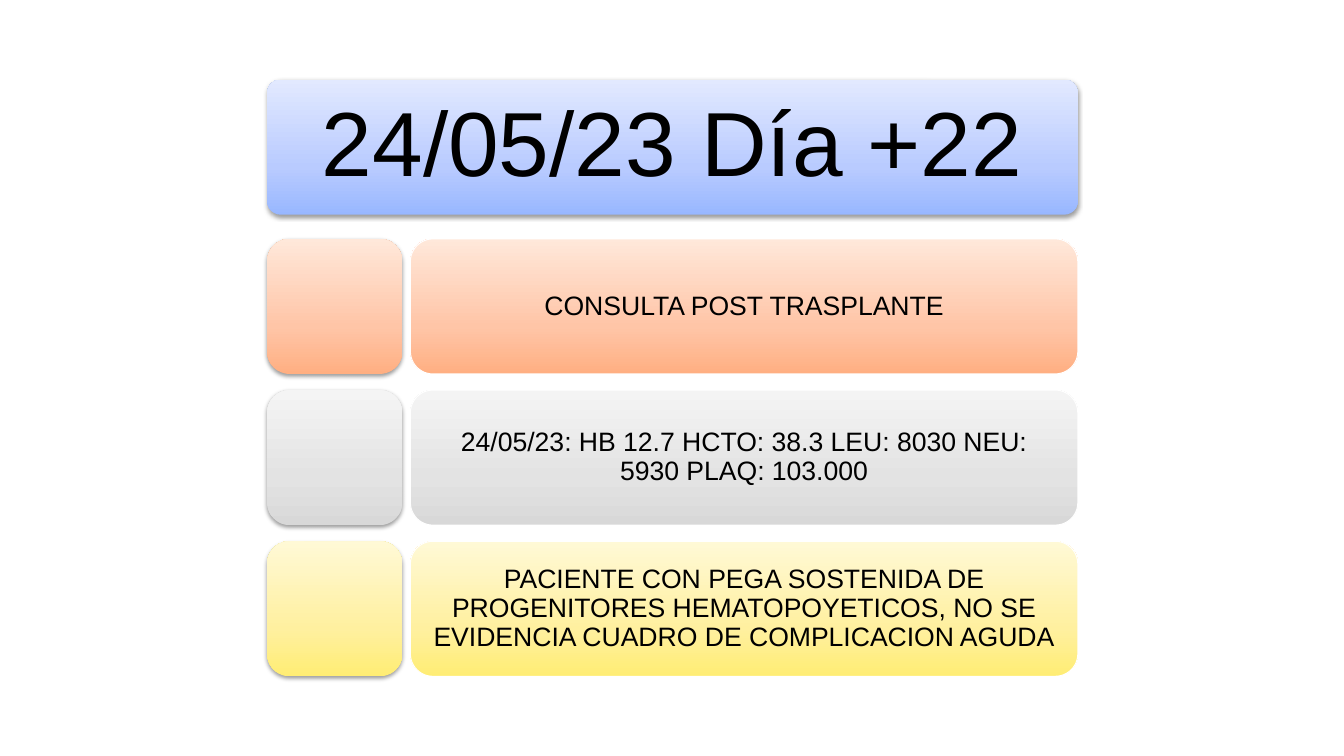
from copy import deepcopy

from lxml import etree
from pptx import Presentation
from pptx.dml.color import RGBColor
from pptx.enum import shapes, text
from pptx.oxml import ns
from pptx.util import Inches, Pt

BLACK = RGBColor(0x00, 0x00, 0x00)
WHITE = RGBColor(0xFF, 0xFF, 0xFF)
# Gradients run from the bottom edge to the top edge
BLUE = (RGBColor(0x98, 0xB7, 0xFF), RGBColor(0xB9, 0xCB, 0xFF), RGBColor(0xE2, 0xE9, 0xFF))
ORANGE = (RGBColor(0xFF, 0xAF, 0x82), RGBColor(0xFF, 0xC5, 0xA7), RGBColor(0xFF, 0xE8, 0xDA))
GRAY = (RGBColor(0xD8, 0xD8, 0xD8), RGBColor(0xE3, 0xE3, 0xE3), RGBColor(0xF4, 0xF4, 0xF4))
YELLOW = (RGBColor(0xFF, 0xED, 0x74), RGBColor(0xFF, 0xF0, 0x9F), RGBColor(0xFF, 0xF9, 0xD6))
STOP_POSITIONS = (0, 0.35, 1)

LEFT, CARD_LEFT = 2.65, 4.07
BANNER_TOP, FIRST_ROW_TOP, ROW_PITCH = 0.79, 2.37, 1.5
BANNER_WIDTH, CARD_WIDTH, HEIGHT = 8.04, 6.62, 1.34

ROWS = (
    (ORANGE, "CONSULTA POST TRASPLANTE"),
    (GRAY, "24/05/23: HB 12.7 HCTO: 38.3 LEU: 8030 NEU: 5930 PLAQ: 103.000"),
    (YELLOW, "PACIENTE CON PEGA SOSTENIDA DE PROGENITORES HEMATOPOYETICOS, "
             "NO SE EVIDENCIA CUADRO DE COMPLICACION AGUDA"),
)


def set_all(target, values):
    for name, value in values.items():
        setattr(target, name, value)


class SlideBuilder:
    font_name = "Arial"

    def __init__(self, slide):
        self.slide = slide

    def panel(self, left, top, width, gradient, corner=0.167):
        shape = self.slide.shapes.add_shape(
            shapes.MSO_SHAPE.ROUNDED_RECTANGLE,
            Inches(left), Inches(top), Inches(width), Inches(HEIGHT))
        shape.adjustments[0] = corner
        shape.shadow.inherit = False
        shape.line.fill.background()
        self.paint(shape, gradient)
        return shape

    def paint(self, shape, gradient):
        shape.fill.gradient()
        shape.fill.gradient_angle = 90
        stop_list = shape._element.spPr.find(".//" + ns.qn("a:gsLst"))
        stop_list.insert(1, deepcopy(stop_list[0]))
        for stop, position, color in zip(shape.fill.gradient_stops, STOP_POSITIONS, gradient):
            stop.position = position
            stop.color.rgb = color

    def raised_panel(self, *args, **options):
        """Add a panel that casts a soft shadow downwards."""
        shape = self.panel(*args, **options)
        effects = shape._element.spPr.find(ns.qn("a:effectLst"))
        shadow = etree.SubElement(effects, ns.qn("a:outerShdw"), blurRad="40000",
                                  dist="20000", dir="5400000", rotWithShape="0")
        color = etree.SubElement(shadow, ns.qn("a:srgbClr"), val="000000")
        etree.SubElement(color, ns.qn("a:alpha"), val="38000")
        return shape

    def card(self, left, top, width, gradient, words):
        shape = self.panel(left, top, width, gradient)
        shape.line.width = Pt(0.75)
        shape.line.color.rgb = WHITE
        self.put_text(shape, words, 19, 0.15, 0.15)

    def title(self, left, top, width, height, words):
        title = self.slide.shapes.title
        set_all(title, {"left": Inches(left), "top": Inches(top),
                        "width": Inches(width), "height": Inches(height)})
        self.put_text(title, words, 65, 0.14, 0.09)
        # Bring the title in front of its banner
        self.slide.shapes._spTree.append(title._element)

    def put_text(self, shape, words, size, side_margin, end_margin):
        frame = shape.text_frame
        frame.text = words
        set_all(frame, {
            "word_wrap": True,
            "auto_size": text.MSO_AUTO_SIZE.NONE,
            "vertical_anchor": text.MSO_ANCHOR.MIDDLE,
            "margin_left": Inches(side_margin), "margin_right": Inches(side_margin),
            "margin_top": Inches(end_margin), "margin_bottom": Inches(end_margin),
        })
        paragraph = frame.paragraphs[0]
        set_all(paragraph, {"alignment": text.PP_ALIGN.CENTER, "line_spacing": 0.9})
        font = paragraph.runs[0].font
        set_all(font, {"name": self.font_name, "size": Pt(size)})
        font.color.rgb = BLACK


def main():
    presentation = Presentation()
    set_all(presentation, {"slide_width": Inches(13.33), "slide_height": Inches(7.5)})
    builder = SlideBuilder(presentation.slides.add_slide(presentation.slide_layouts[5]))

    builder.raised_panel(LEFT, BANNER_TOP, BANNER_WIDTH, BLUE, corner=0.1)
    builder.title(2.69, 0.83, 7.96, 1.26, "24/05/23 Día +22")
    for index, (gradient, words) in enumerate(ROWS):
        top = FIRST_ROW_TOP + index * ROW_PITCH
        builder.raised_panel(LEFT, top, HEIGHT, gradient)
        builder.card(CARD_LEFT, top, CARD_WIDTH, gradient, words)

    presentation.save("out.pptx")


if __name__ == "__main__":
    main()
